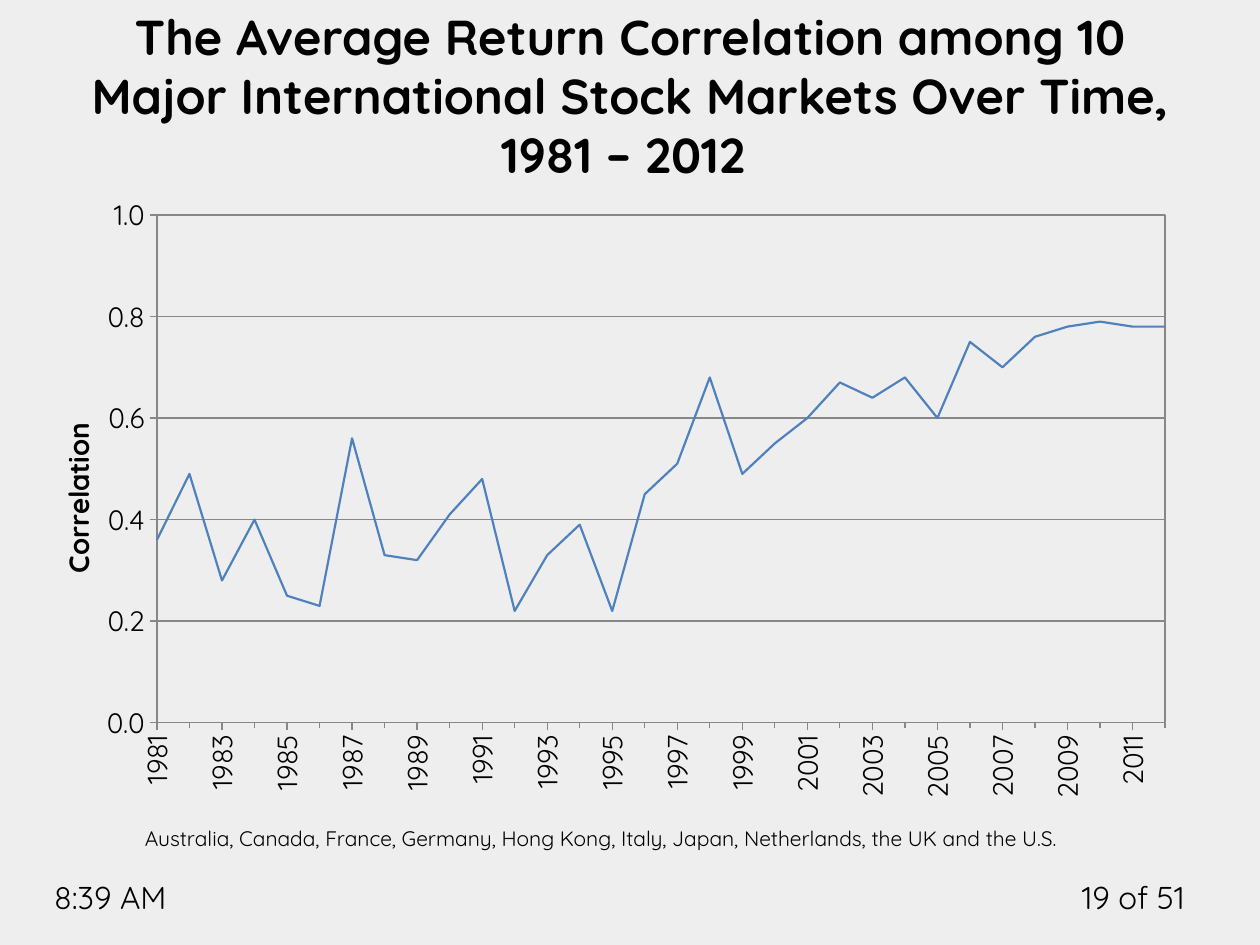
"""Build a slide charting the average correlation among ten stock markets."""
from dataclasses import dataclass

from lxml.etree import SubElement
from pptx import Presentation
from pptx.chart.data import XyChartData
from pptx.dml.color import RGBColor
from pptx.enum.chart import XL_AXIS_CROSSES, XL_CHART_TYPE, XL_TICK_LABEL_POSITION, XL_TICK_MARK
from pptx.enum.text import MSO_ANCHOR, MSO_AUTO_SIZE, PP_ALIGN
from pptx.oxml.ns import qn
from pptx.util import Cm, Pt

BACKGROUND = RGBColor(0xEE, 0xEE, 0xEE)
BLACK = RGBColor(0, 0, 0)
GRAY = RGBColor(0x87, 0x87, 0x87)
BLUE = RGBColor(0x4F, 0x81, 0xBD)
FONT_NAME = "Quicksand"
UPRIGHT = "-5400000"
FIRST_YEAR = 1981
LAST_YEAR = 2012
CORRELATIONS = (
    0.36, 0.49, 0.28, 0.4, 0.25, 0.23, 0.56, 0.33, 0.32, 0.41, 0.48,
    0.22, 0.33, 0.39, 0.22, 0.45, 0.51, 0.68, 0.49, 0.55, 0.6, 0.67,
    0.64, 0.68, 0.6, 0.75, 0.7, 0.76, 0.78, 0.79, 0.78, 0.78,
)
PLOT_LAYOUT = {
    "layoutTarget": "inner", "xMode": "edge", "yMode": "edge",
    "x": "0.092", "y": "0.049", "w": "0.893", "h": "0.829",
}


@dataclass(frozen=True)
class Label:
    text: str
    left: float
    top: float
    width: float
    height: float
    size: int
    alignment: PP_ALIGN = PP_ALIGN.LEFT


LABELS = (
    Label("19 of 51", 21.16, 17.58, 2.97, 1.02, 18, PP_ALIGN.RIGHT),
    Label("8:39 AM", 0.84, 17.58, 4.01, 1.02, 18),
    Label("Australia, Canada, France, Germany, Hong Kong, Italy, Japan, "
          "Netherlands, the UK and the U.S.", 2.67, 16.51, 22.66, 0.76, 12),
)


def format_font(font, size: int, bold: bool = False) -> None:
    font.name = FONT_NAME
    font.size = Pt(size)
    font.bold = bold
    font.color.rgb = BLACK


def write_text(text_frame, text: str, *, size: int, bold: bool = False,
               alignment: PP_ALIGN = PP_ALIGN.LEFT) -> None:
    paragraph = text_frame.paragraphs[0]
    paragraph.alignment = alignment
    run = paragraph.add_run()
    run.text = text
    format_font(run.font, size, bold)


def add_label(slide, label: Label) -> None:
    shape = slide.shapes.add_textbox(
        Cm(label.left), Cm(label.top), Cm(label.width), Cm(label.height))
    shape.text_frame.word_wrap = True
    shape.text_frame.auto_size = MSO_AUTO_SIZE.SHAPE_TO_FIT_TEXT
    write_text(shape.text_frame, label.text, size=label.size, alignment=label.alignment)


def format_title(slide) -> None:
    title = slide.shapes.title
    title.left, title.top, title.width, title.height = Cm(1.27), Cm(0.64), Cm(22.86), Cm(3.18)
    title.text_frame.word_wrap = True
    title.text_frame.auto_size = MSO_AUTO_SIZE.NONE
    title.text_frame.vertical_anchor = MSO_ANCHOR.BOTTOM
    write_text(
        title.text_frame,
        "The Average Return Correlation among 10 Major International "
        "Stock Markets Over Time, 1981 – 2012 ",
        size=28, bold=True, alignment=PP_ALIGN.CENTER)


def format_axis(axis, minimum: float, maximum: float, major: float, number_format: str) -> None:
    axis.minimum_scale, axis.maximum_scale, axis.major_unit = minimum, maximum, major
    axis.major_tick_mark = XL_TICK_MARK.OUTSIDE
    axis.minor_tick_mark = XL_TICK_MARK.NONE
    axis.tick_label_position = XL_TICK_LABEL_POSITION.LOW
    axis.crosses = XL_AXIS_CROSSES.MINIMUM
    axis.has_major_gridlines = False
    axis.tick_labels.number_format = number_format
    axis.tick_labels.number_format_is_linked = False
    format_font(axis.tick_labels.font, 16)
    axis.format.line.color.rgb = GRAY
    axis.format.line.width = Pt(0.75)


def turn_upright(element) -> None:
    body = next(element.iter(qn("a:bodyPr")))
    body.set("rot", UPRIGHT)
    body.set("vert", "horz")


def format_plot_area(chart) -> None:
    plot_area = next(chart.element.iter(qn("c:plotArea")))
    for layout in plot_area.findall(qn("c:layout")):
        plot_area.remove(layout)
    layout = SubElement(plot_area, qn("c:layout"))
    plot_area.insert(0, layout)
    manual_layout = SubElement(layout, qn("c:manualLayout"))
    for name, value in PLOT_LAYOUT.items():
        SubElement(manual_layout, qn(f"c:{name}"), val=value)
    properties = SubElement(plot_area, qn("c:spPr"))
    SubElement(properties, qn("a:noFill"))
    line = SubElement(properties, qn("a:ln"), w=str(Pt(0.75)))
    fill = SubElement(line, qn("a:solidFill"))
    SubElement(fill, qn("a:srgbClr"), val=str(GRAY))


def add_correlation_chart(slide) -> None:
    chart_data = XyChartData()
    points = chart_data.add_series("Series 1")
    for year, correlation in enumerate(CORRELATIONS, FIRST_YEAR):
        points.add_data_point(year, correlation)
    chart = slide.shapes.add_chart(
        XL_CHART_TYPE.XY_SCATTER_LINES_NO_MARKERS,
        Cm(1.07), Cm(3.73), Cm(22.76), Cm(12.37), chart_data).chart
    chart.has_title = False
    chart.has_legend = False
    format_font(chart.font, 16)

    year_axis, correlation_axis = chart.category_axis, chart.value_axis
    format_axis(year_axis, FIRST_YEAR, LAST_YEAR, 2, "General")
    year_axis.minor_unit = 1
    year_axis.minor_tick_mark = XL_TICK_MARK.OUTSIDE
    turn_upright(year_axis.tick_labels.font._element.getparent().getparent().getparent()
                 if hasattr(year_axis.tick_labels.font, "_element")
                 else chart.element.findall(".//" + qn("c:valAx"))[0].find(qn("c:txPr")))

    format_axis(correlation_axis, 0, 1, 0.2, "0.0")
    correlation_axis.has_major_gridlines = True
    correlation_axis.major_gridlines.format.line.color.rgb = GRAY
    correlation_axis.major_gridlines.format.line.width = Pt(0.75)
    axis_title = correlation_axis.axis_title
    write_text(axis_title.text_frame, "Correlation", size=16, bold=True,
               alignment=PP_ALIGN.CENTER)
    turn_upright(chart.element.findall(".//" + qn("c:valAx"))[1].find(qn("c:title")))

    plot = chart.plots[0]
    plot.vary_by_categories = False
    plot.series[0].format.line.color.rgb = BLUE
    plot.series[0].format.line.width = Pt(1.25)
    format_plot_area(chart)


def main() -> None:
    presentation = Presentation()
    presentation.slide_width, presentation.slide_height = Cm(25.4), Cm(19.05)
    slide = presentation.slides.add_slide(presentation.slide_layouts[5])
    slide.background.fill.solid()
    slide.background.fill.fore_color.rgb = BACKGROUND
    format_title(slide)
    add_correlation_chart(slide)
    for label in LABELS:
        add_label(slide, label)
    presentation.save("out.pptx")


if __name__ == "__main__":
    main()
